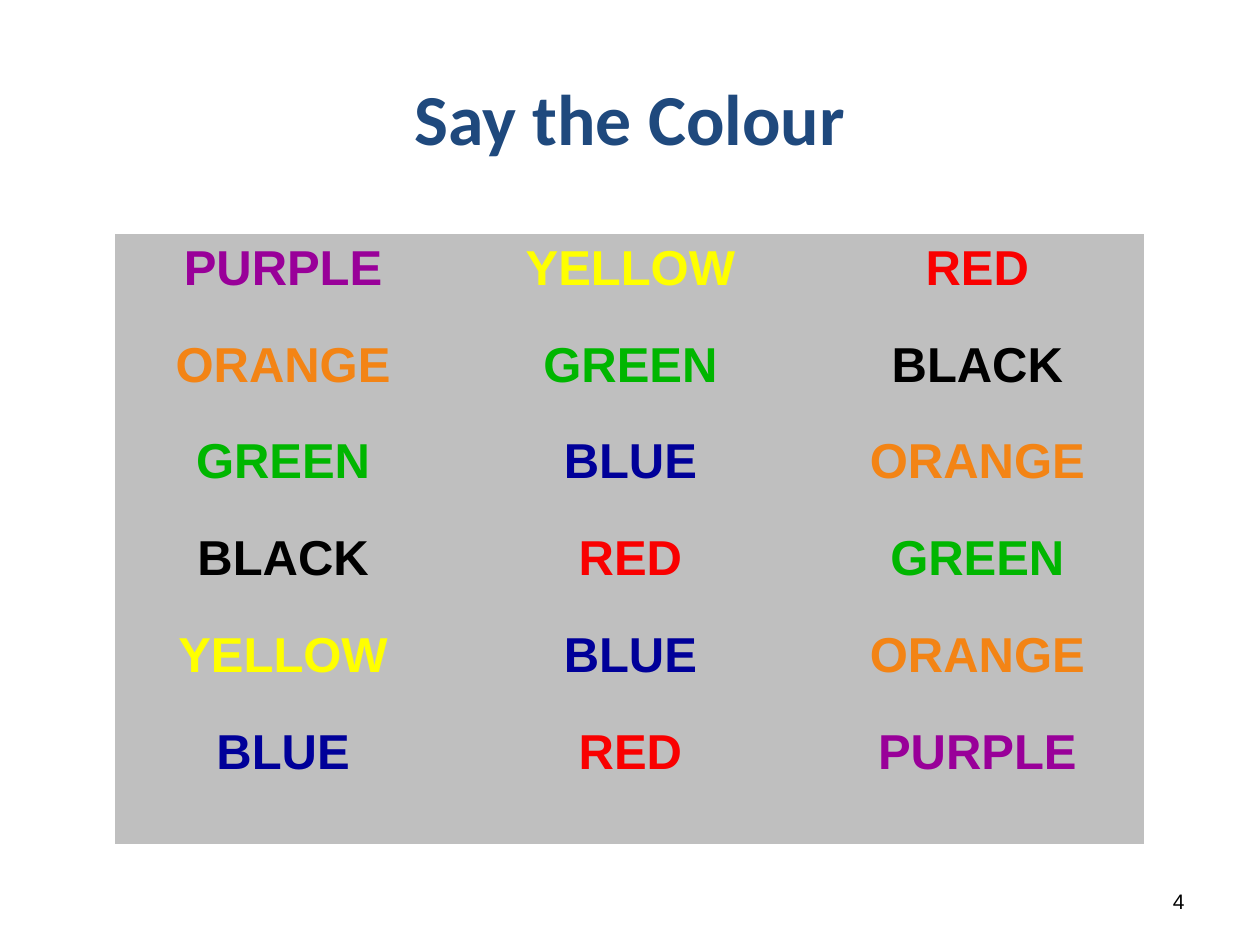
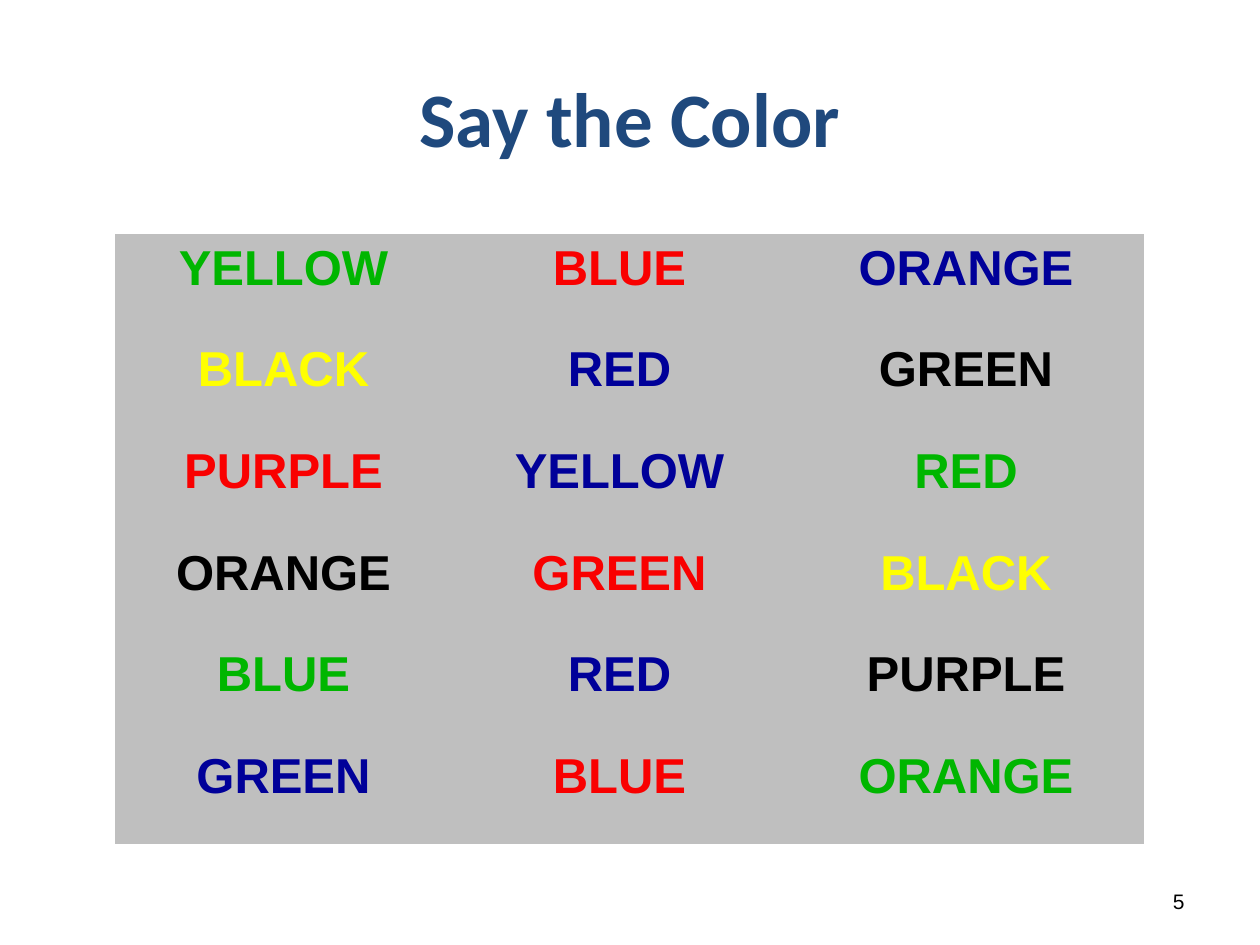
import pptx
import pptx.dml.color
import pptx.enum.text
import pptx.oxml.ns
import pptx.util

Pt = pptx.util.Pt
RGBColor = pptx.dml.color.RGBColor
PP_ALIGN = pptx.enum.text.PP_ALIGN
MSO_ANCHOR = pptx.enum.text.MSO_ANCHOR

NAVY = RGBColor(0x1F, 0x49, 0x7D)
GREY = RGBColor(0xBF, 0xBF, 0xBF)
BLACK = RGBColor(0x00, 0x00, 0x00)
INKS = {
    "PURPLE": RGBColor(0x99, 0x00, 0x99),
    "YELLOW": RGBColor(0xFF, 0xFF, 0x00),
    "RED": RGBColor(0xF9, 0x00, 0x00),
    "ORANGE": RGBColor(0xF3, 0x84, 0x15),
    "GREEN": RGBColor(0x00, 0xB6, 0x00),
    "BLUE": RGBColor(0x00, 0x00, 0x99),
    "BLACK": BLACK,
}
NO_STYLE_NO_GRID = "{2D5ABB26-0587-4C30-8999-92F81FD0307C}"

MATCHING_WORDS = [
    "PURPLE YELLOW RED",
    "ORANGE GREEN BLACK",
    "GREEN BLUE ORANGE",
    "BLACK RED GREEN",
    "YELLOW BLUE ORANGE",
    "BLUE RED PURPLE",
]
CLASHING_WORDS = [
    "YELLOW BLUE ORANGE",
    "BLACK RED GREEN",
    "PURPLE YELLOW RED",
    "ORANGE GREEN BLACK",
    "BLUE RED PURPLE",
    "GREEN BLUE ORANGE",
]
CLASHING_INKS = [
    "GREEN RED BLUE",
    "YELLOW BLUE BLACK",
    "RED BLUE GREEN",
    "BLACK RED YELLOW",
    "GREEN BLUE BLACK",
    "BLUE RED GREEN",
]


class Deck:
    """Holds the shared style and the slide being built."""

    def __init__(self):
        self.prs = pptx.Presentation()
        self.prs.slide_width, self.prs.slide_height = Pt(720), Pt(540)
        self.s = None

    def style(self, p, text, font, size, color, align, bold=False):
        p.text = text
        p.alignment = align
        p.font.name, p.font.size, p.font.bold = font, Pt(size), bold
        p.font.color.rgb = color

    def slide(self, title, title_size, number):
        self.s = self.prs.slides.add_slide(self.prs.slide_layouts[5])
        self.title(title, title_size)
        self.page_number(number)

    def title(self, text, size):
        sp = self.s.shapes.title
        sp.left, sp.top, sp.width, sp.height = Pt(36), Pt(21.6), Pt(648), Pt(90)
        sp.text_frame.vertical_anchor = MSO_ANCHOR.MIDDLE
        self.style(sp.text_frame.paragraphs[0], text, "Calibri", size, NAVY,
                   PP_ALIGN.CENTER, bold=True)

    def page_number(self, number):
        sp = self.s.shapes.add_textbox(Pt(516), Pt(500.5), Pt(168), Pt(28.75))
        tf = sp.text_frame
        tf.word_wrap = True
        tf.vertical_anchor = MSO_ANCHOR.MIDDLE
        self.style(tf.paragraphs[0], str(number), "Arial", 12, BLACK, PP_ALIGN.RIGHT)

    def word_grid(self, words, inks, widths, heights):
        frame = self.s.shapes.add_table(len(heights), len(widths), Pt(66), Pt(134),
                                        Pt(sum(widths)), Pt(sum(heights)))
        style_id = frame.element.find(".//" + pptx.oxml.ns.qn("a:tableStyleId"))
        style_id.text = NO_STYLE_NO_GRID
        table = frame.table
        table.first_row = table.horz_banding = False
        for column, width in zip(table.columns, widths):
            column.width = Pt(width)
        for row, height, row_words, row_inks in zip(table.rows, heights, words, inks):
            row.height = Pt(height)
            for cell, word, ink in zip(row.cells, row_words.split(), row_inks.split()):
                cell.fill.solid()
                cell.fill.fore_color.rgb = GREY
                self.style(cell.text_frame.paragraphs[0], word, "Arial", 28,
                           INKS[ink], PP_ALIGN.CENTER, bold=True)


def main():
    deck = Deck()
    deck.slide("Say the Colour", 41, 4)
    deck.word_grid(MATCHING_WORDS, MATCHING_WORDS, [191.5, 205.5, 191], [55.4] * 5 + [71.5])
    deck.slide("Say the Color", 44, 5)
    deck.word_grid(CLASHING_WORDS, CLASHING_INKS, [192, 192, 204], [58.1] * 6)
    deck.prs.save("out.pptx")


if __name__ == "__main__":
    main()
